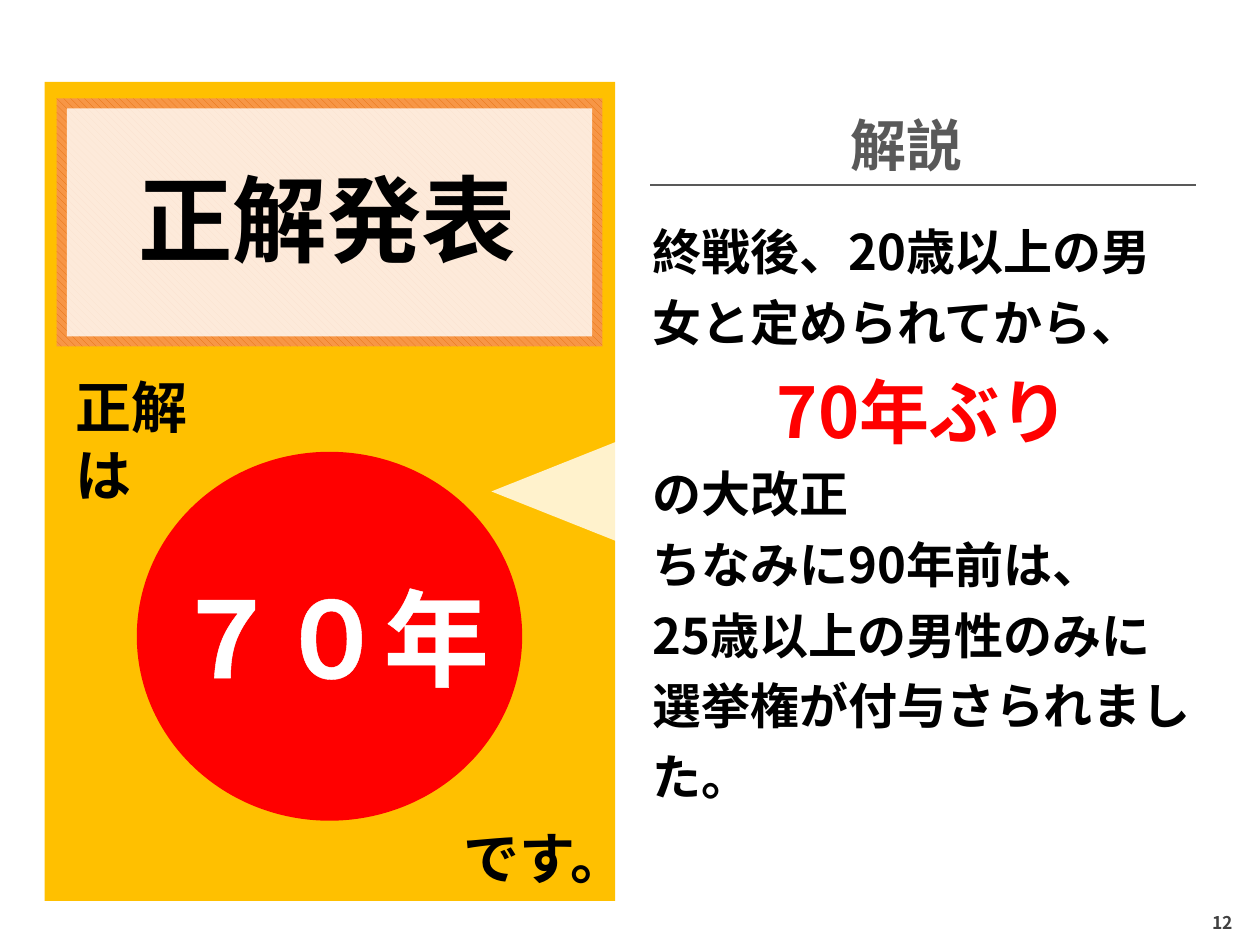
from dataclasses import dataclass
from typing import Optional

from lxml.etree import SubElement
from pptx import Presentation
from pptx.dml.color import RGBColor
from pptx.enum.dml import MSO_PATTERN
from pptx.enum.shapes import MSO_CONNECTOR, MSO_SHAPE as Shp
from pptx.enum.text import MSO_ANCHOR, MSO_AUTO_SIZE, PP_ALIGN as Al
from pptx.oxml.ns import qn
from pptx.util import Pt

FONT = "Noto Sans CJK JP"
WHITE = RGBColor(0xFF, 0xFF, 0xFF)
BLACK = RGBColor(0, 0, 0)
RED = RGBColor(0xFF, 0, 0)
AMBER = RGBColor(0xFF, 0xC0, 0)
ORANGE = RGBColor(0xF7, 0x96, 0x46)
DARK_ORANGE = RGBColor(0xE4, 0x6C, 0x0A)
GRAY = RGBColor(0x59, 0x59, 0x59)
DARK_GRAY = RGBColor(0x40, 0x40, 0x40)


@dataclass
class Box:
    left: float
    top: float
    width: float
    height: float

    def pts(self) -> list:
        return [Pt(v) for v in (self.left, self.top, self.width, self.height)]


@dataclass
class Panel:
    box: Box
    color: RGBColor
    kind: Shp = Shp.RECTANGLE
    opacity: int = 100
    line: Optional[RGBColor] = None
    line_width: float = 0
    rotation: float = 0
    radius: Optional[float] = None


@dataclass
class Para:
    text: str
    size: float
    color: RGBColor = BLACK
    align: Al = Al.LEFT
    spacing: Optional[float] = None
    outline: float = 0


@dataclass
class Label:
    box: Box
    paras: list
    wrap: bool = True


def add_panel(s, panel: Panel):
    sp = s.shapes.add_shape(panel.kind, *panel.box.pts())
    sp.shadow.inherit = False
    sp.rotation = panel.rotation
    if panel.radius is not None:
        sp.adjustments[0] = panel.radius
    sp.fill.solid()
    sp.fill.fore_color.rgb = panel.color
    if panel.opacity < 100:
        clr = sp.fill._xPr.find(qn("a:solidFill"))[0]
        SubElement(clr, qn("a:alpha")).set("val", str(panel.opacity * 1000))
    if panel.line is None:
        sp.line.fill.background()
    else:
        sp.line.color.rgb = panel.line
        sp.line.width = Pt(panel.line_width)
    return sp


def add_para(p, para: Para) -> None:
    p.alignment = para.align
    if para.spacing:
        p.line_spacing = para.spacing
    r = p.add_run()
    r.text = para.text
    f = r.font
    f.size, f.bold, f.name = Pt(para.size), True, FONT
    f.color.rgb = para.color
    rpr = f._element
    rpr.find(qn("a:latin")).addnext(rpr.makeelement(qn("a:ea"), {"typeface": FONT}))
    if para.outline:
        ln = rpr.makeelement(qn("a:ln"), {"w": str(Pt(para.outline))})
        fill = SubElement(ln, qn("a:solidFill"))
        SubElement(fill, qn("a:srgbClr")).set("val", str(para.color))
        rpr.insert(0, ln)


def add_label(s, label: Label) -> None:
    tf = s.shapes.add_textbox(*label.box.pts()).text_frame
    tf.word_wrap = label.wrap
    tf.auto_size = MSO_AUTO_SIZE.SHAPE_TO_FIT_TEXT
    for i, para in enumerate(label.paras):
        add_para(tf.add_paragraph() if i else tf.paragraphs[0], para)


def add_rule(s, left: float, right: float, y: float) -> None:
    rule = s.shapes.add_connector(MSO_CONNECTOR.STRAIGHT, Pt(left), Pt(y), Pt(right), Pt(y))
    rule.line.color.rgb = GRAY
    rule.line.width = Pt(0.75)
    SubElement(rule._element.spPr, qn("a:effectLst"))


def add_page_number(s, box: Box, number: str) -> None:
    tf = add_panel(s, Panel(box, WHITE)).text_frame
    tf.word_wrap = False
    tf.vertical_anchor = MSO_ANCHOR.MIDDLE
    tf.margin_left = tf.margin_right = tf.margin_top = tf.margin_bottom = Pt(2.9)
    add_para(tf.paragraphs[0], Para(number, 10, DARK_GRAY, Al.CENTER))


def main() -> None:
    prs = Presentation()
    prs.slide_width, prs.slide_height = Pt(720), Pt(540)
    s = prs.slides.add_slide(prs.slide_layouts[6])

    # Background and answer panel
    add_panel(s, Panel(Box(13, 13.7, 694.8, 513.4), WHITE, opacity=20,
                       line=WHITE, line_width=0.5))
    add_panel(s, Panel(Box(25.5, 46.8, 326, 468), AMBER))

    # Title frame with a diagonal pattern
    frame = add_panel(s, Panel(Box(32.4, 56.2, 311.8, 141.8), ORANGE))
    frame.fill.patterned()
    frame.fill.pattern = MSO_PATTERN.WIDE_DOWNWARD_DIAGONAL
    frame.fill.fore_color.rgb = DARK_ORANGE
    frame.fill.back_color.rgb = ORANGE

    # Translucent overlays and the pointer
    for panel in (
        Panel(Box(38.2, 61.9, 300.2, 130.3), WHITE, opacity=80),
        Panel(Box(364.3, 46.8, 330.5, 468), WHITE, Shp.ROUNDED_RECTANGLE, 80, radius=0.06),
        Panel(Box(290.2, 234.7, 73.4, 92.2), WHITE, Shp.ISOSCELES_TRIANGLE, 80, rotation=270),
    ):
        add_panel(s, panel)
    add_page_number(s, Box(677.5, 514.8, 42.5, 25.2), "12")

    # Headings and explanation
    body = [
        Para("終戦後、20歳以上の男女と定められてから、", 28, spacing=1.2),
        Para("70年ぶり", 40, RED, Al.CENTER, 1.2),
        Para("の大改正", 28, spacing=1.2),
        Para("ちなみに90年前は、", 28, spacing=1.2),
        Para("25歳以上の男性のみに選挙権が付与さられました。", 28, spacing=1.2),
    ]
    for label in (
        Label(Box(70.6, 88.6, 232.6, 72.7), [Para("正解発表", 54, align=Al.CENTER)], False),
        Label(Box(36, 209.5, 108, 46.1), [Para("正解は", 32)]),
        Label(Box(257.8, 467.3, 92.2, 46.1), [Para("です。", 32)]),
        Label(Box(478.8, 59.8, 79.2, 46.1), [Para("解説", 32, GRAY)], False),
        Label(Box(365.8, 116.6, 323.3, 309.6), body),
    ):
        add_label(s, label)
    add_rule(s, 371.5, 683.3, 105.8)

    # Answer disc
    add_panel(s, Panel(Box(79.2, 259.2, 218.2, 208.8), RED, Shp.OVAL, line=RED, line_width=2))
    add_label(s, Label(Box(81.4, 324, 216, 79.9),
                       [Para("７０年", 60, WHITE, Al.CENTER, outline=1.5)]))

    prs.save("out.pptx")


if __name__ == "__main__":
    main()
